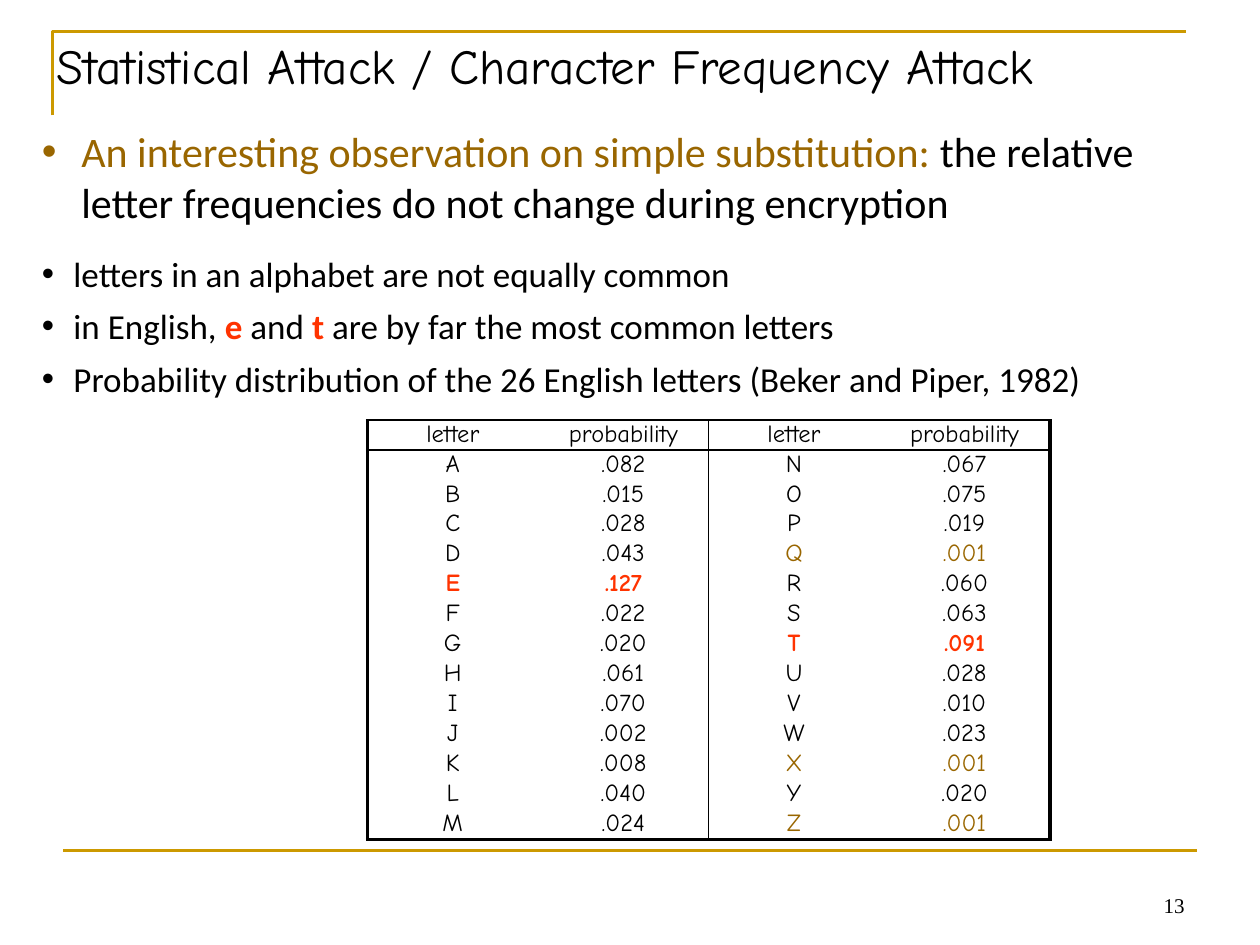
from dataclasses import dataclass
from typing import Any

from lxml import etree
from pptx import Presentation
from pptx.dml.color import RGBColor
from pptx.enum import shapes, text
from pptx.oxml import ns
from pptx.util import Pt

HUES = {"ink": "000000", "gold": "CC9900", "brown": "996600", "red": "FF3300"}
COMMON = {"E", "T"}
RARE = {"Q", "X", "Z"}
LEFT = dict(zip("ABCDEFGHIJKLM", (
    ".082 .015 .028 .043 .127 .022 .020 .061 .070 .002 .008 .040 .024").split()))
RIGHT = dict(zip("NOPQRSTUVWXYZ", (
    ".067 .075 .019 .001 .060 .063 .091 .028 .010 .023 .001 .020 .001").split()))
PLAIN = "{2D5ABB26-0587-4C30-8999-92F81FD0307C}"


@dataclass
class Run:
    words: str
    hue: str = "ink"
    bold: bool = False


@dataclass
class Para:
    runs: list[Run]
    indent: float = 0
    after: float = 0
    align: Any = text.PP_ALIGN.LEFT


@dataclass
class Box:
    left: float
    top: float
    width: float
    height: float
    font: str
    size: float
    paras: list[Para]
    frame: dict[str, Any]


def tint(hue: str) -> RGBColor:
    return RGBColor.from_string(HUES[hue])


def assign(item: Any, values: dict[str, Any]) -> None:
    for key, value in values.items():
        setattr(item, key, value)


def fill_para(para: Any, data: Para, font: str, size: float) -> None:
    assign(para, {"alignment": data.align, "space_after": Pt(data.after)})
    if data.indent:
        props = para._p.get_or_add_pPr()
        props.set("marL", str(Pt(data.indent)))
        props.set("indent", str(-Pt(data.indent)))
        etree.SubElement(props, ns.qn("a:buFont")).set("typeface", "Arial")
        etree.SubElement(props, ns.qn("a:buChar")).set("char", "•")
    for part in data.runs:
        run = para.add_run()
        run.text = part.words
        assign(run.font, {"name": font, "size": Pt(size), "bold": part.bold})
        run.font.color.rgb = tint(part.hue)


def add_box(slide: Any, box: Box) -> None:
    shape = slide.shapes.add_textbox(
        Pt(box.left), Pt(box.top), Pt(box.width), Pt(box.height))
    frame = shape.text_frame
    assign(frame, box.frame)
    for index, data in enumerate(box.paras):
        para = frame.add_paragraph() if index else frame.paragraphs[0]
        fill_para(para, data, box.font, box.size)


def add_edges(cell: Any, edges: dict[str, float]) -> None:
    props = cell._tc.get_or_add_tcPr()
    for index, side in enumerate("LRTB"):
        line = etree.Element(ns.qn(f"a:ln{side}"))
        width = edges.get(side, 0)
        if width:
            line.set("w", str(Pt(width)))
            fill = etree.SubElement(line, ns.qn("a:solidFill"))
            etree.SubElement(fill, ns.qn("a:srgbClr")).set("val", HUES["ink"])
        else:
            etree.SubElement(line, ns.qn("a:noFill"))
        props.insert(index, line)


def add_grid(slide: Any, rows: list[list[Run]]) -> None:
    count, wide = len(rows), len(rows[0])
    table = slide.shapes.add_table(
        count, wide, Pt(210), Pt(240), Pt(390), Pt(240)).table
    assign(table, {"first_row": False, "horz_banding": False})
    table._tbl.tblPr.find(ns.qn("a:tableStyleId")).text = PLAIN
    for column in table.columns:
        column.width = Pt(390 / wide)
    sides = [{"L": 2.25}, {"R": 1}, {"L": 1}, {"R": 2.25}]
    for r, row in enumerate(rows):
        table.rows[r].height = Pt(240 / count)
        for c, run in enumerate(row):
            cell = table.cell(r, c)
            assign(cell, {f"margin_{side}": 0
                          for side in ("left", "right", "top", "bottom")})
            cell.fill.background()
            edges = dict(sides[c])
            if r < 2:
                edges["T"] = 1
            if r in (0, count - 1):
                edges["B"] = 2.25 if r else 1
            add_edges(cell, edges)
            data = Para([run], align=text.PP_ALIGN.CENTER)
            fill_para(cell.text_frame.paragraphs[0], data, "Comic Neue", 14)


def pair(letter: str, chance: str) -> list[Run]:
    hue = "red" if letter in COMMON else "brown" if letter in RARE else "ink"
    return [Run(word, hue, letter in COMMON) for word in (letter, chance)]


def add_rules(slide: Any) -> None:
    pen = slide.shapes.build_freeform(Pt(30), Pt(66))
    pen.add_line_segments([(Pt(30), Pt(18)), (Pt(678), Pt(18))], close=False)
    bracket = pen.convert_to_shape()
    bracket.shadow.inherit = False
    bracket.fill.background()
    rule = slide.shapes.add_connector(
        shapes.MSO_CONNECTOR.STRAIGHT, Pt(36), Pt(486), Pt(684), Pt(486))
    etree.SubElement(rule._element.spPr, ns.qn("a:effectLst"))
    for item in (bracket, rule):
        item.line.color.rgb = tint("gold")
        item.line.width = Pt(1.5)
    rule._element.spPr.append(rule._element.spPr.find(ns.qn("a:effectLst")))


def main() -> None:
    deck = Presentation()
    assign(deck, {"slide_width": Pt(720), "slide_height": Pt(540)})
    slide = deck.slides.add_slide(deck.slide_layouts[6])
    tight = {"margin_left": 0, "margin_right": 0, "margin_top": 0,
             "margin_bottom": 0, "word_wrap": True,
             "auto_size": text.MSO_AUTO_SIZE.SHAPE_TO_FIT_TEXT}
    title = [Para([Run("Statistical Attack / Character Frequency Attack")])]
    lead = [Para([
        Run("An interesting observation on simple substitution: ", "brown"),
        Run("the relative letter frequencies do not change during encryption"),
    ], 22.5)]
    facts = [
        Para([Run("letters in an alphabet are not equally common")], 18, 6),
        Para([Run("in English, "), Run("e", "red", True), Run(" and "),
              Run("t", "red", True),
              Run(" are by far the most common letters")], 18, 6),
        Para([Run("Probability distribution of the 26 English letters "
                  "(Beker and Piper, 1982)")], 18),
    ]
    page = [Para([Run("13")], align=text.PP_ALIGN.RIGHT)]
    low = {"word_wrap": True, "vertical_anchor": text.MSO_ANCHOR.BOTTOM}
    add_rules(slide)
    for box in (
        Box(32.4, 20.4, 668, 34, "Comic Neue", 28, title,
            {**tight, "word_wrap": False}),
        Box(24, 72, 678, 58.5, "Calibri", 24, lead, tight),
        Box(24, 144, 684, 85, "Calibri", 20, facts, tight),
        Box(516, 492, 168, 36, "Times New Roman", 12, page, low),
    ):
        add_box(slide, box)
    heads = [Run("letter"), Run("probability")] * 2
    body = [pair(*a) + pair(*b) for a, b in zip(LEFT.items(), RIGHT.items())]
    add_grid(slide, [heads] + body)
    deck.save("out.pptx")


if __name__ == "__main__":
    main()
